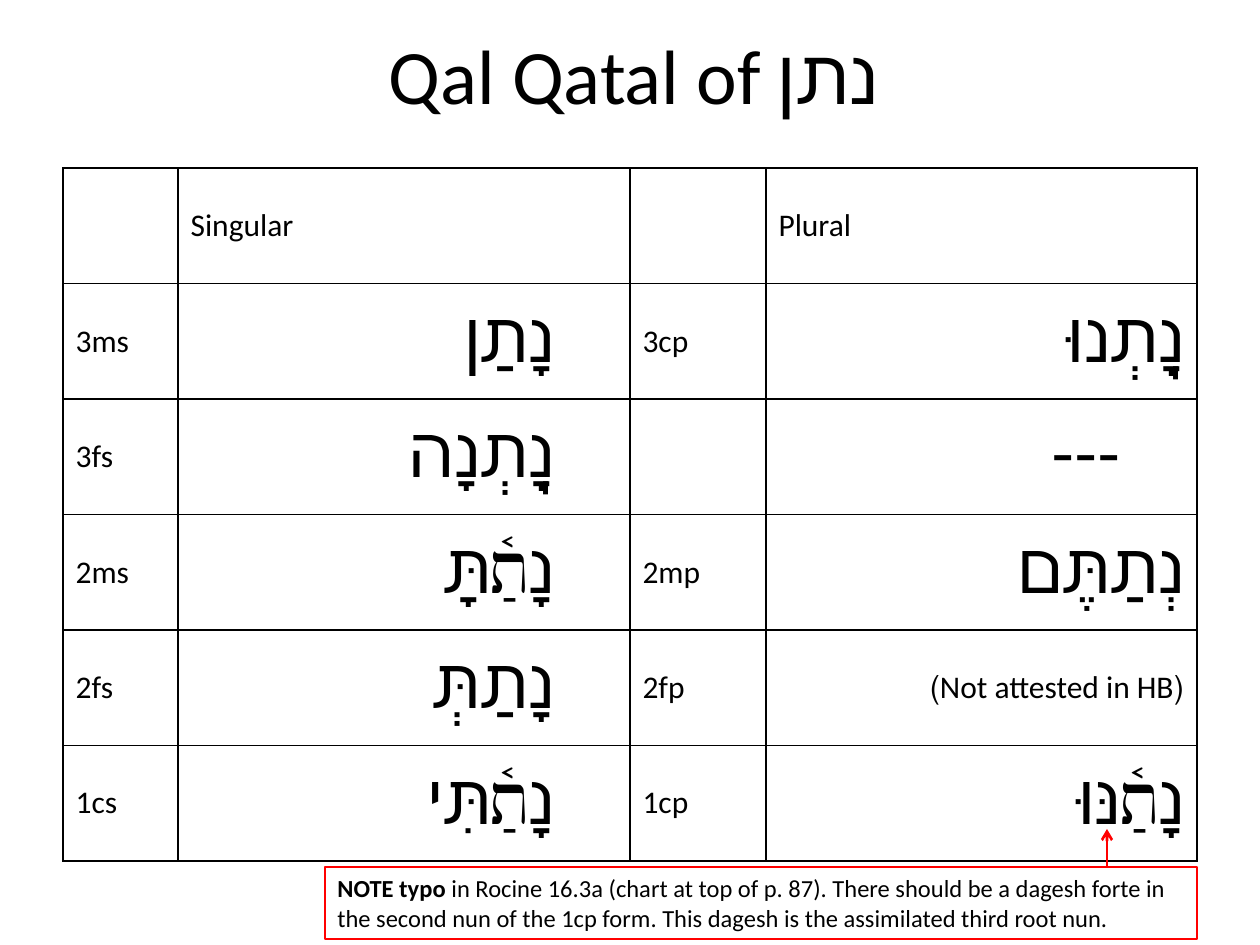
"""Build the slide with the Qal Qatal paradigm table."""
from pptx import Presentation
from pptx.dml.color import RGBColor
from pptx.enum.shapes import MSO_CONNECTOR, MSO_SHAPE
from pptx.enum.text import MSO_ANCHOR, PP_ALIGN
from pptx.oxml.ns import qn
from pptx.util import Emu, Pt
from lxml import etree

LINE, RECT = MSO_CONNECTOR.STRAIGHT, MSO_SHAPE.RECTANGLE
MID, TOP = MSO_ANCHOR.MIDDLE, MSO_ANCHOR.TOP
LEFT, MEAN, RIGHT = PP_ALIGN.LEFT, PP_ALIGN.CENTER, PP_ALIGN.RIGHT
INK = {"text": "000000", "note": "FF0000"}
LATIN, HEBREW = "Calibri", "Arial"

TITLE = ("Qal Qatal of ", "נתן")
PLAIN = "(Not attested in HB)"
ROWS = [
    ("", "Singular", "", "Plural"),
    ("3ms", "\tנָתַן", "3cp", "נָֽתְנוּ"),
    ("3fs", "\tנָֽתְנָה", "", "\t---"),
    ("2ms", "\tנָתַ֫תָּ", "2mp", "נְתַתֶּם"),
    ("2fs", "\tנָתַתְּ", "2fp", PLAIN),
    ("1cs", "\tנָתַ֫תִּי", "1cp", "נָתַ֫נּוּ"),
]
NOTE = (
    "NOTE typo ",
    "in Rocine 16.3a (chart at top of p. 87). There should be a dagesh forte in "
    "the second nun of the 1cp form. This dagesh is the assimilated third root nun.",
)
COLS = (115, 452, 136, 431)
HEAD_BOX = (66, 0, 1134, 147)
GRID_BOX = (63, 168, 1134, 693)
NOTE_BOX = (325, 867, 872, 72)
ARROW = (1107, 867, 1107, 829)


def px(num):
    return Emu(round(num * 914400 / 126))


def box(nums):
    return [px(num) for num in nums]


def rgb(name):
    return RGBColor.from_string(INK[name])


def style(run, size, face=LATIN, bold=False):
    font = run.font
    font.size, font.name, font.bold = Pt(size), face, bold
    font.color.rgb = rgb("text")


def border(cell):
    props = cell._tc.get_or_add_tcPr()
    for side in ("lnL", "lnR", "lnT", "lnB"):
        line = etree.SubElement(props, qn("a:" + side), w=str(Pt(1)))
        fill = etree.SubElement(line, qn("a:solidFill"))
        etree.SubElement(fill, qn("a:srgbClr"), val=INK["text"])


def set_rtl(para):
    para.alignment = RIGHT
    props = para._p.get_or_add_pPr()
    props.set("rtl", "1")
    tabs = etree.SubElement(props, qn("a:tabLst"))
    etree.SubElement(tabs, qn("a:tab"), pos=str(px(63)), algn="r")


def add_title(slide):
    title = slide.shapes.title
    title.left, title.top, title.width, title.height = box(HEAD_BOX)
    frame = title.text_frame
    frame.vertical_anchor = MID
    para = frame.paragraphs[0]
    para.alignment = MEAN
    for text, face in zip(TITLE, (LATIN, HEBREW)):
        run = para.add_run()
        run.text = text
        style(run, 44, face)


def add_grid(slide):
    grid = slide.shapes.add_table(len(ROWS), len(COLS), *box(GRID_BOX)).table
    grid.first_row = grid.horz_banding = False
    for col, wide in zip(grid.columns, COLS):
        col.width = px(wide)
    for i, row in enumerate(ROWS):
        for j, text in enumerate(row):
            cell = grid.cell(i, j)
            border(cell)
            cell.fill.background()
            cell.vertical_anchor = MID
            para = cell.text_frame.paragraphs[0]
            para.text = text
            form = i > 0 and j % 2 == 1
            if form:
                set_rtl(para)
            for run in para.runs:
                if form and text != PLAIN:
                    style(run, 40, HEBREW)
                else:
                    style(run, 18)


def add_note(slide):
    note = slide.shapes.add_shape(RECT, *box(NOTE_BOX))
    note.shadow.inherit = False
    note.fill.background()
    note.line.color.rgb, note.line.width = rgb("note"), Pt(1.5)
    frame = note.text_frame
    frame.word_wrap, frame.vertical_anchor = True, TOP
    para = frame.paragraphs[0]
    para.alignment = LEFT
    for text, bold in zip(NOTE, (True, False)):
        run = para.add_run()
        run.text = text
        style(run, 14, bold=bold)


def add_arrow(slide):
    arrow = slide.shapes.add_connector(LINE, *box(ARROW))
    arrow.line.color.rgb, arrow.line.width = rgb("note"), Pt(1.5)
    etree.SubElement(arrow.line._get_or_add_ln(), qn("a:tailEnd"), type="arrow")
    etree.SubElement(arrow._element.spPr, qn("a:effectLst"))


def main():
    deck = Presentation()
    deck.slide_width, deck.slide_height = px(1260), px(945)
    slide = deck.slides.add_slide(deck.slide_layouts[5])
    add_title(slide)
    add_grid(slide)
    add_note(slide)
    add_arrow(slide)
    deck.save("out.pptx")


if __name__ == "__main__":
    main()
